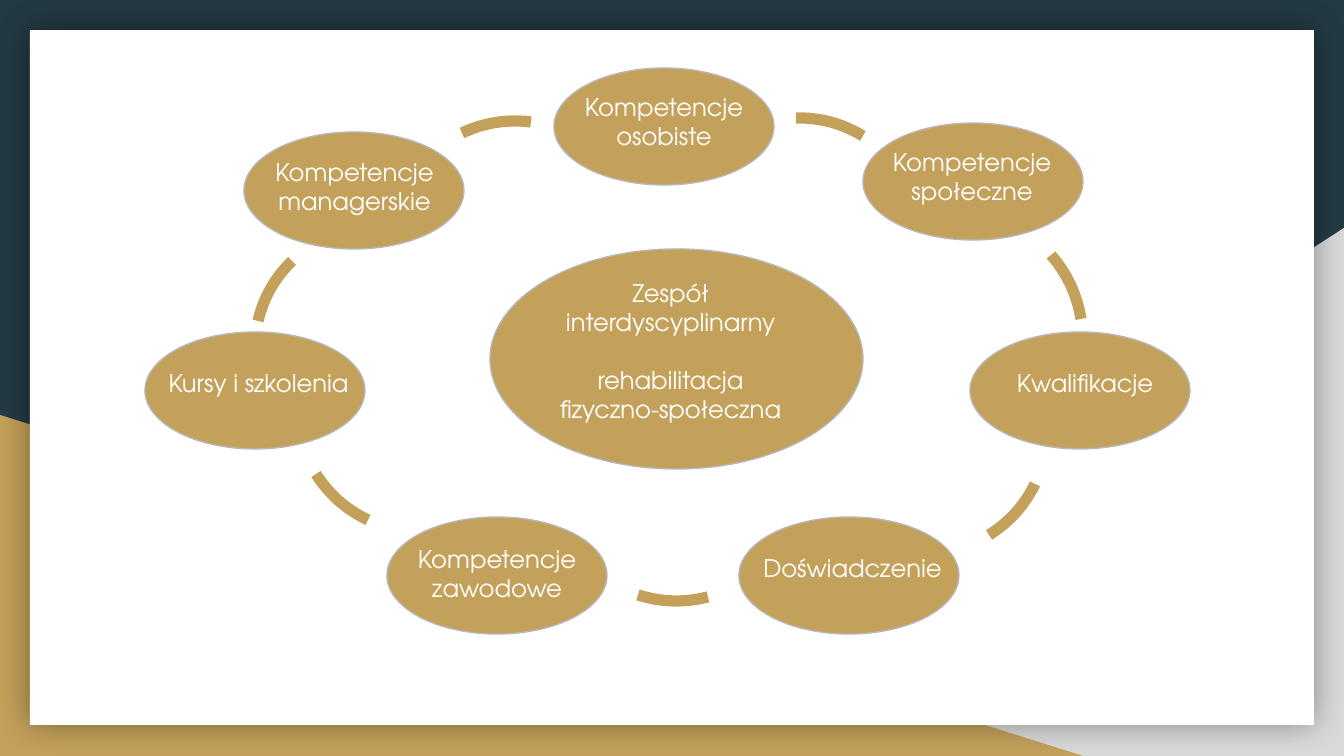
from dataclasses import dataclass
from math import hypot

from lxml.etree import SubElement
from pptx import Presentation
from pptx.dml.color import RGBColor
from pptx.enum.shapes import MSO_SHAPE
from pptx.enum.text import MSO_ANCHOR, PP_ALIGN
from pptx.oxml.ns import qn
from pptx.util import Pt

EMU_PER_PX = 914400 / 134.4
SLIDE_SIZE = (1344, 756)
NODE_SIZE = (220, 117)

# label, ellipse left and top, text box left, top, width and height
COMPETENCES = [
    ("Doświadczenie", (739, 517), (747, 540, 211, 78)),
    ("Kompetencje zawodowe", (387, 517), (395, 531, 204, 95)),
    ("Kursy i szkolenia", (145, 332), (153, 355, 211, 105)),
    ("Kwalifikacje", (970, 332), (989, 355, 192, 95)),
    ("Kompetencje społeczne", (863, 123), (876, 134, 192, 95)),
    ("Kompetencje osobiste", (554, 68), (571, 79, 186, 95)),
    ("Kompetencje managerskie", (244, 132), (249, 144, 211, 105)),
]

# Clockwise around the ring: start point, end point
ARCS = [
    ((258, 321), (292, 261)),
    ((462, 133), (531, 122)),
    ((796, 118), (863, 136)),
    ((1051, 255), (1081, 319)),
    ((1035, 484), (989, 535)),
    ((708, 597), (638, 595)),
    ((368, 520), (316, 474)),
]


@dataclass(frozen=True)
class Theme:
    navy: RGBColor = RGBColor.from_string("233A44")
    gold: RGBColor = RGBColor.from_string("C4A15A")
    light_gray: RGBColor = RGBColor.from_string("D9D9D9")
    outline: RGBColor = RGBColor.from_string("B7B7B7")
    white: RGBColor = RGBColor.from_string("FFFFFF")
    font: str = "TeX Gyre Adventor"
    text_size: Pt = Pt(13)
    paragraph_gap: Pt = Pt(15.6)
    outline_width: Pt = Pt(0.75)
    arc_width: Pt = Pt(6)


def px(length):
    return round(length * EMU_PER_PX)


class SlideBuilder:
    def __init__(self, slide, theme):
        self.slide = slide
        self.theme = theme

    def background(self, color):
        fill = self.slide.background.fill
        fill.solid()
        fill.fore_color.rgb = color

    def shape(self, kind, box, color):
        shape = self.slide.shapes.add_shape(kind, *map(px, box))
        shape.shadow.inherit = False
        shape.fill.solid()
        shape.fill.fore_color.rgb = color
        shape.line.fill.background()
        return shape

    def triangle(self, box, color, flipped=False):
        triangle = self.shape(MSO_SHAPE.RIGHT_TRIANGLE, box, color)
        if flipped:
            triangle._element.spPr.find(qn("a:xfrm")).set("flipH", "1")

    def panel(self, box):
        """Add a white sheet with a soft shadow on all sides."""
        panel = self.shape(MSO_SHAPE.RECTANGLE, box, self.theme.white)
        effects = panel._element.spPr.find(qn("a:effectLst"))
        shadow = SubElement(effects, qn("a:outerShdw"), blurRad=str(Pt(18)), dist="0",
                            dir="0", algn="ctr", rotWithShape="0")
        color = SubElement(shadow, qn("a:srgbClr"), val="000000")
        SubElement(color, qn("a:alpha"), val="40000")

    def ellipse(self, box):
        ellipse = self.shape(MSO_SHAPE.OVAL, box, self.theme.gold)
        ellipse.line.color.rgb = self.theme.outline
        ellipse.line.width = self.theme.outline_width

    def label(self, text, box):
        text_frame = self.slide.shapes.add_textbox(*map(px, box)).text_frame
        text_frame.word_wrap = True
        text_frame.vertical_anchor = MSO_ANCHOR.TOP
        text_frame.margin_left = text_frame.margin_right = px(13)
        text_frame.margin_top = text_frame.margin_bottom = px(13)
        text_frame.text = text
        for index, paragraph in enumerate(text_frame.paragraphs):
            paragraph.alignment = PP_ALIGN.CENTER
            if index:
                paragraph.space_before = self.theme.paragraph_gap
            for run in paragraph.runs:
                run.font.name = self.theme.font
                run.font.size = self.theme.text_size
                run.font.color.rgb = self.theme.white

    def arc(self, start, end, bulge=5, steps=12):
        """Add a shallow clockwise curve that rises by bulge above its chord."""
        (x, y), (end_x, end_y) = start, end
        dx, dy = end_x - x, end_y - y
        chord = hypot(dx, dy)
        points = []
        for step in range(steps + 1):
            t = step / steps
            rise = 4 * bulge * t * (1 - t) / chord
            points.append((px(x + dx * t + dy * rise), px(y + dy * t - dx * rise)))
        builder = self.slide.shapes.build_freeform(*points[0])
        builder.add_line_segments(points[1:], close=False)
        arc = builder.convert_to_shape()
        arc.shadow.inherit = False
        arc.fill.background()
        arc.line.color.rgb = self.theme.gold
        arc.line.width = self.theme.arc_width


def main():
    presentation = Presentation()
    presentation.slide_width, presentation.slide_height = map(px, SLIDE_SIZE)
    theme = Theme()
    blank_layout = presentation.slide_layouts[6]
    builder = SlideBuilder(presentation.slides.add_slide(blank_layout), theme)

    builder.background(theme.navy)
    builder.triangle((527, 228, 817, 528), theme.light_gray, flipped=True)
    builder.triangle((0, 415, 1083, 341), theme.gold)
    builder.panel((30, 30, 1284, 695))

    for _, position, _ in COMPETENCES:
        builder.ellipse(position + NODE_SIZE)
    builder.ellipse((490, 249, 373, 220))

    for text, _, text_box in COMPETENCES:
        builder.label(text, text_box)
    builder.label("Zespół interdyscyplinarny\nrehabilitacja fizyczno-społeczna",
                  (542, 265, 257, 129))

    for start, end in ARCS:
        builder.arc(start, end)

    presentation.save("out.pptx")


if __name__ == "__main__":
    main()
